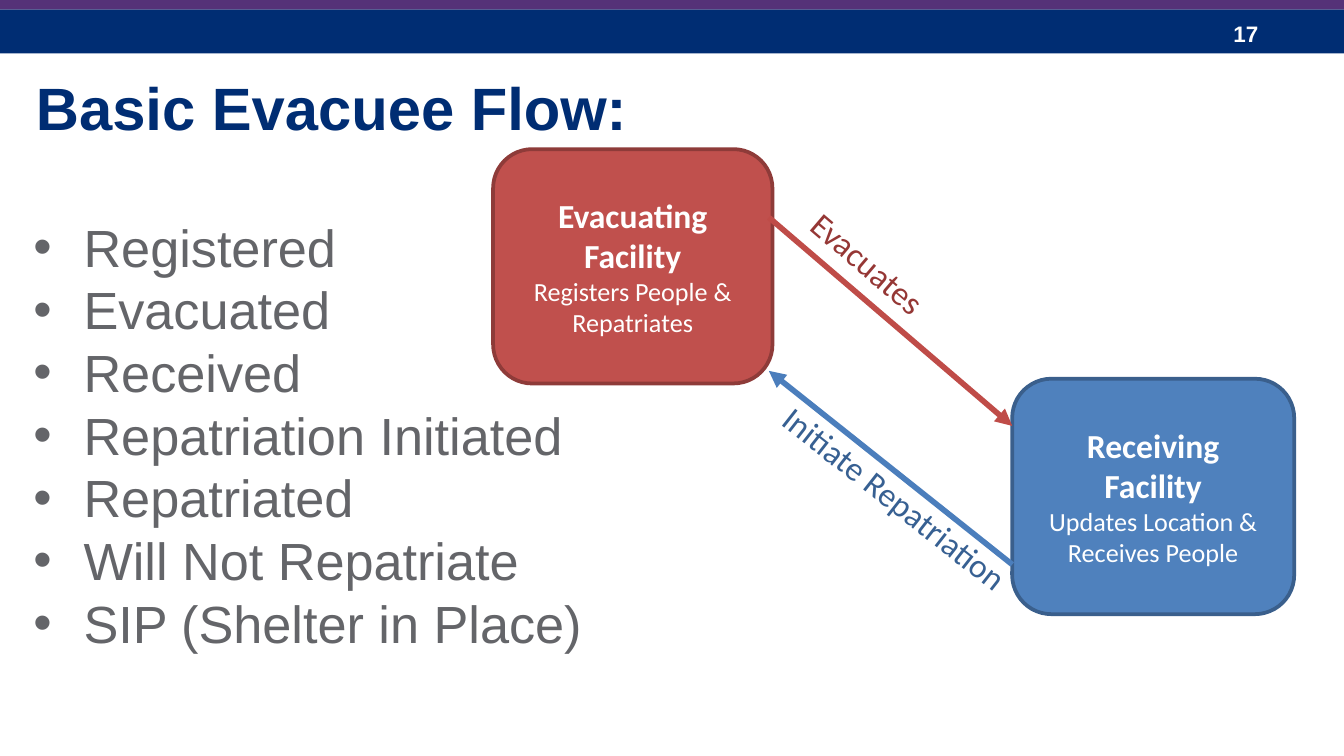
from lxml.etree import SubElement
from pptx import Presentation
from pptx.dml.color import RGBColor
from pptx.enum.shapes import MSO_CONNECTOR as Link, MSO_SHAPE as Shape
from pptx.enum.text import MSO_ANCHOR as Anchor, PP_ALIGN as Align
from pptx.oxml.ns import qn
from pptx.util import Cm, Pt

# Content: positions are left, top, width, height in cm
TITLE = ("Basic Evacuee Flow:", (0.43, 1.22, 24.13, 3))
PAGE_NUMBER = ("17", (23.06, 0.25, 1.9, 0.76))
STATUSES = [
    "Registered", "Evacuated", "Received", "Repatriation Initiated",
    "Repatriated", "Will Not Repatriate", "SIP (Shelter in Place)",
]
STATUS_AREA = (0.38, 3.94, 11, 9.4)
BANDS = [("navy", (0, 0.18, 25.4, 0.83)), ("purple", (0, -0.05, 25.4, 0.23))]
FACILITIES = [
    {"names": ["Evacuating", "Facility"], "role": "Registers People & Repatriates",
     "area": (9.32, 2.82, 5.28, 4.43), "fill": "red", "line": "dark_red"},
    {"names": ["Receiving Facility"], "role": "Updates Location & Receives People",
     "area": (19.13, 7.16, 5.33, 4.45), "fill": "blue", "line": "dark_blue"},
]
FLOWS = [
    {"label": "Evacuates", "start": (14.53, 4.11), "end": (19.13, 8.05),
     "area": (14.81, 4.65, 3.63, 1.02), "angle": 40.5,
     "line": "red_arrow", "text": "red_text"},
    {"label": "Initiate Repatriation", "start": (19.13, 10.67), "end": (14.53, 7.01),
     "area": (14.05, 9.04, 6.07, 1.02), "angle": 38.1,
     "line": "blue_arrow", "text": "blue_text"},
]

THEME = {
    "colors": {
        "navy": "002D73", "purple": "553278", "white": "FFFFFF", "gray": "646569",
        "red": "C0504D", "dark_red": "8E3B39", "red_arrow": "BF4C48", "red_text": "953735",
        "blue": "4F81BD", "dark_blue": "3A5F8C", "blue_arrow": "4B7EBC", "blue_text": "376092",
    },
    "fonts": {
        "title": {"name": "Arial", "size": Pt(32), "bold": True},
        "page": {"name": "Arial", "size": Pt(12), "bold": True},
        "status": {"name": "Arial", "size": Pt(28), "bold": False},
        "facility": {"name": "Calibri", "size": Pt(18), "bold": True},
        "role": {"name": "Calibri", "size": Pt(14), "bold": False},
        "flow": {"name": "Calibri", "size": Pt(18), "bold": False},
    },
}


def color(name):
    return RGBColor.from_string(THEME["colors"][name])


def lengths(values):
    return [Cm(value) for value in values]


def write(box, lines, align=Align.LEFT):
    """Fill a box with (text, font style, color) lines and return its paragraphs."""
    frame = box.text_frame
    frame.word_wrap = True
    for index, (text, style, ink) in enumerate(lines):
        para = frame.add_paragraph() if index else frame.paragraphs[0]
        para.alignment = align
        span = para.add_run()
        span.text = text
        for key, value in THEME["fonts"][style].items():
            setattr(span.font, key, value)
        span.font.color.rgb = color(ink)
    return frame.paragraphs


def add_text(page, area, lines):
    box = page.shapes.add_textbox(*lengths(area))
    write(box, lines)
    return box


def add_block(page, kind, area, fill, line=None):
    block = page.shapes.add_shape(kind, *lengths(area))
    block.shadow.inherit = False
    block.fill.solid()
    block.fill.fore_color.rgb = color(fill)
    if line:
        block.line.color.rgb = color(line)
        block.line.width = Pt(2)
    else:
        block.line.fill.background()
    return block


def add_arrow(page, start, end, ink):
    arrow = page.shapes.add_connector(Link.STRAIGHT, *lengths(start + end))
    arrow.line.color.rgb = color(ink)
    arrow.line.width = Pt(3)
    SubElement(arrow.line._get_or_add_ln(), qn("a:tailEnd"), type="triangle")
    SubElement(arrow._element.spPr, qn("a:effectLst"))


def add_bullet(para):
    props = para._p.get_or_add_pPr()
    props.set("marL", str(Cm(0.95)))
    props.set("indent", str(Cm(-0.95)))
    SubElement(props, qn("a:buFont"), typeface="Arial")
    SubElement(props, qn("a:buChar"), char="•")
    para.line_spacing = Pt(33.6)


def main():
    deck = Presentation()
    deck.slide_width, deck.slide_height = Cm(25.4), Cm(14.29)
    page = deck.slides.add_slide(deck.slide_layouts[6])

    # Header bands, page number and title
    for fill, area in BANDS:
        add_block(page, Shape.RECTANGLE, area, fill)
    for (text, area), style, ink in [(PAGE_NUMBER, "page", "white"), (TITLE, "title", "navy")]:
        add_text(page, area, [(text, style, ink)])

    # Status list
    statuses = add_text(page, STATUS_AREA, [(text, "status", "gray") for text in STATUSES])
    for para in statuses.text_frame.paragraphs:
        add_bullet(para)

    # Facilities
    for item in FACILITIES:
        block = add_block(page, Shape.ROUNDED_RECTANGLE, item["area"], item["fill"], item["line"])
        block.text_frame.vertical_anchor = Anchor.MIDDLE
        lines = [(name, "facility", "white") for name in item["names"]]
        write(block, lines + [(item["role"], "role", "white")], Align.CENTER)

    # Flows between the facilities
    for flow in FLOWS:
        add_arrow(page, flow["start"], flow["end"], flow["line"])
        label = add_text(page, flow["area"], [(flow["label"], "flow", flow["text"])])
        label.rotation = flow["angle"]

    deck.save("out.pptx")


if __name__ == "__main__":
    main()
